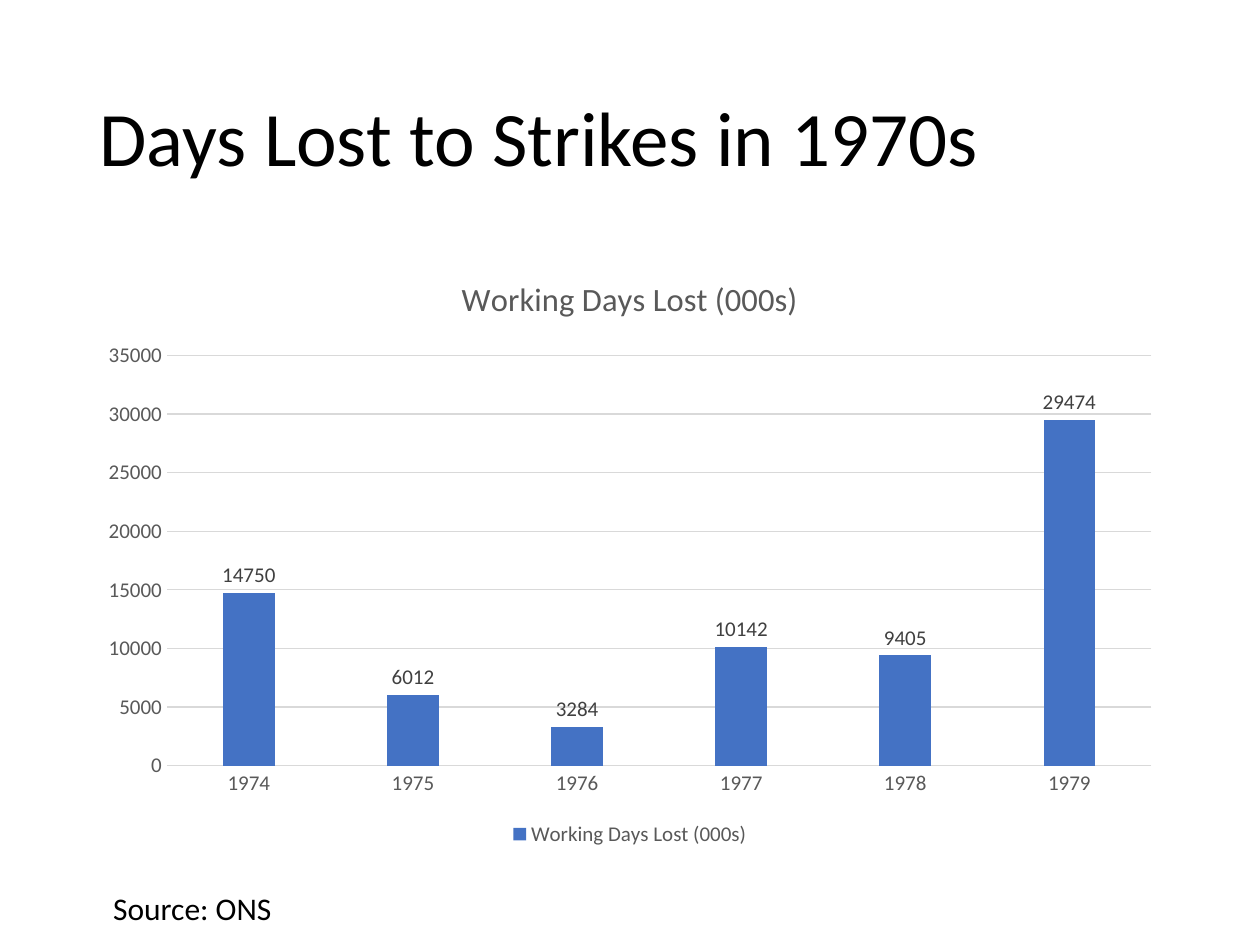
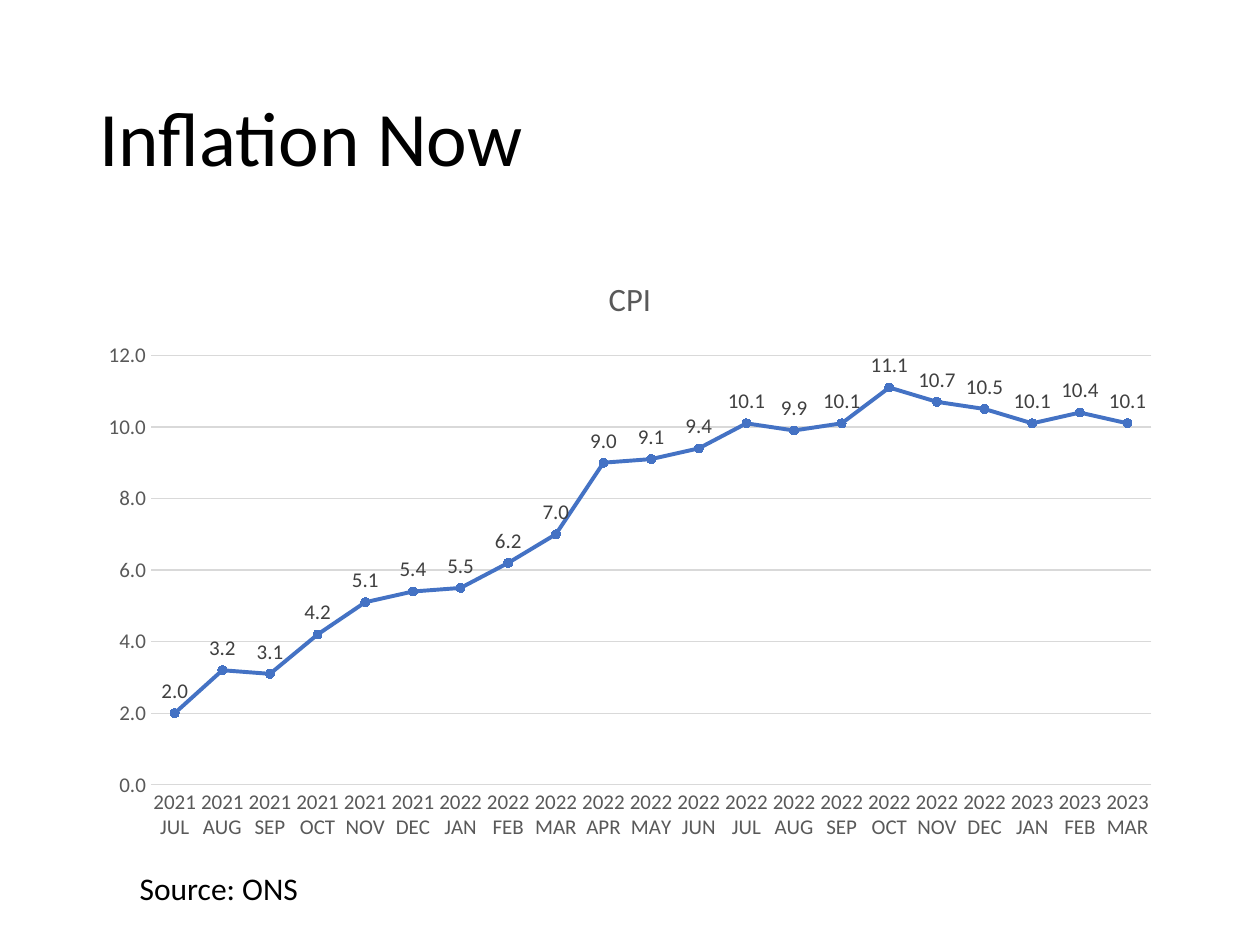
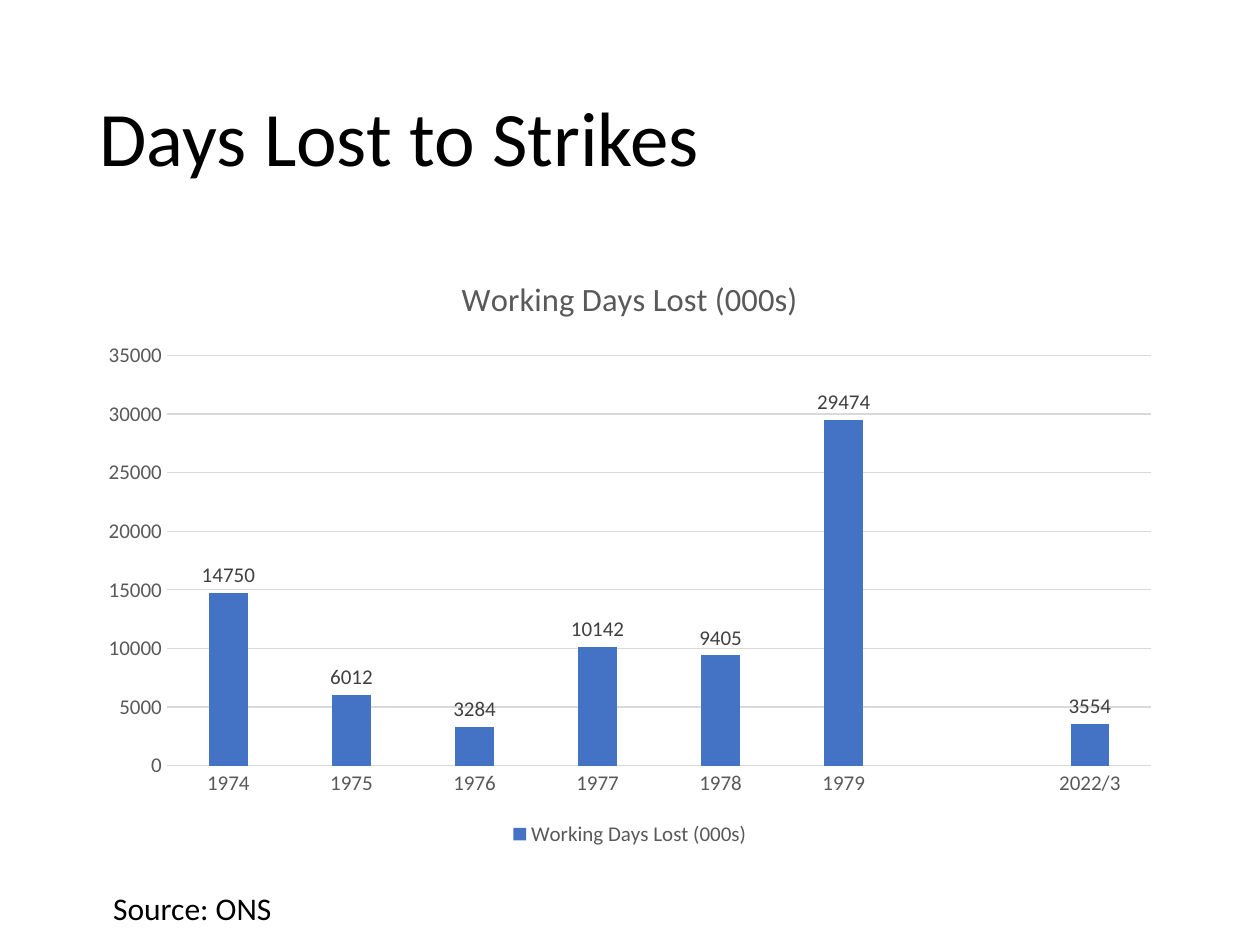
from pptx import Presentation
from pptx.chart.data import CategoryChartData
from pptx.dml.color import RGBColor
from pptx.enum.chart import (XL_CHART_TYPE, XL_LABEL_POSITION, XL_LEGEND_POSITION,
                             XL_MARKER_STYLE, XL_TICK_MARK)
from pptx.enum.text import MSO_ANCHOR, PP_ALIGN
from pptx.util import Inches, Pt

BARS, LINE = XL_CHART_TYPE.COLUMN_CLUSTERED, XL_CHART_TYPE.LINE_MARKERS
ABOVE, OUTSIDE = XL_LABEL_POSITION.ABOVE, XL_LABEL_POSITION.OUTSIDE_END
BOTTOM = XL_LEGEND_POSITION.BOTTOM
CIRCLE = XL_MARKER_STYLE.CIRCLE
NO_TICK = XL_TICK_MARK.NONE
LEFT, MIDDLE = PP_ALIGN.LEFT, MSO_ANCHOR.MIDDLE

FONT = "Calibri"
BLACK = RGBColor(0x00, 0x00, 0x00)
BLUE = RGBColor(0x44, 0x72, 0xC4)
GREY = RGBColor(0x59, 0x59, 0x59)
DARK = RGBColor(0x40, 0x40, 0x40)
PALE = RGBColor(0xD9, 0xD9, 0xD9)

# Content
SOURCE = "Source: ONS"
DAYS = "Working Days Lost (000s)"
STRIKES = [("1974", 14750), ("1975", 6012), ("1976", 3284),
           ("1977", 10142), ("1978", 9405), ("1979", 29474)]
MONTHS = "JAN FEB MAR APR MAY JUN JUL AUG SEP OCT NOV DEC".split()
CPI = [2, 3.2, 3.1, 4.2, 5.1, 5.4, 5.5, 6.2, 7, 9, 9.1, 9.4, 10.1, 9.9,
       10.1, 11.1, 10.7, 10.5, 10.1, 10.4, 10.1]
START = 6  # the CPI run begins in July 2021
PRICES = [(f"{2021 + n // 12} {MONTHS[n % 12]}", rate)
          for n, rate in enumerate(CPI, START)]

# Title, chart kind, series name, points, number format, place of the source note
SLIDES = [
    ("Days Lost to Strikes in 1970s", BARS, DAYS, STRIKES, "General", (0.8, 7.01, 7.9)),
    ("Inflation Now", LINE, "CPI", PRICES, "0.0", (1.01, 6.85, 8.15)),
    ("Days Lost to Strikes", BARS, DAYS, STRIKES + [("", None), ("2022/3", 3554)],
     "General", (0.8, 7.01, 7.9)),
]
SIDE, WIDTH = Inches(0.69), Inches(8.62)


def style(font, size, color):
    font.name, font.size, font.bold = FONT, Pt(size), False
    font.color.rgb = color


def rule(line, color, width=0.75):
    line.color.rgb = color
    line.width = Pt(width)


def add_title(slide, text):
    title = slide.shapes.title
    title.left, title.top = SIDE, Inches(0.4)
    title.width, title.height = WIDTH, Inches(1.45)
    frame = title.text_frame
    frame.text = text
    frame.vertical_anchor = MIDDLE
    para = frame.paragraphs[0]
    para.alignment, para.line_spacing = LEFT, 0.9
    style(para.font, 44, BLACK)


def add_note(slide, left, top, width):
    box = slide.shapes.add_textbox(Inches(left), Inches(top), Inches(width), Inches(0.4))
    box.text_frame.word_wrap = True
    para = box.text_frame.paragraphs[0]
    para.text = SOURCE
    style(para.font, 18, BLACK)


def add_plot(slide, kind, name, points, form):
    data = CategoryChartData(number_format=form)
    data.categories = [label for label, _ in points]
    data.add_series(name, [value for _, value in points])
    chart = slide.shapes.add_chart(kind, SIDE, Inches(2), WIDTH, Inches(4.76), data).chart
    style(chart.font, 10, BLACK)

    # Heading and legend
    chart.has_title = True
    head = chart.chart_title.text_frame
    head.text = name
    style(head.paragraphs[0].font, 18.6, GREY)
    chart.has_legend = kind == BARS
    if chart.has_legend:
        chart.legend.position = BOTTOM
        chart.legend.include_in_layout = False
        style(chart.legend.font, 12, GREY)

    # Axes
    for axis in (chart.category_axis, chart.value_axis):
        axis.major_tick_mark = axis.minor_tick_mark = NO_TICK
        style(axis.tick_labels.font, 12, GREY)
    rule(chart.category_axis.format.line, PALE)
    scale = chart.value_axis
    scale.format.line.fill.background()
    rule(scale.major_gridlines.format.line, PALE)
    scale.tick_labels.number_format = form
    scale.tick_labels.number_format_is_linked = False

    # Series and labels
    plot = chart.plots[0]
    plot.vary_by_categories = False
    series = plot.series[0]
    if kind == BARS:
        plot.gap_width, plot.overlap = 219, -27
        series.format.fill.solid()
        series.format.fill.fore_color.rgb = BLUE
    else:
        series.smooth = False
        rule(series.format.line, BLUE, 2.25)
        mark = series.marker
        mark.style, mark.size = CIRCLE, 5
        mark.format.fill.solid()
        mark.format.fill.fore_color.rgb = BLUE
        rule(mark.format.line, BLUE)
    labels = series.data_labels
    labels.show_value = True
    labels.position = OUTSIDE if kind == BARS else ABOVE
    labels.number_format, labels.number_format_is_linked = form, False
    style(labels.font, 12, DARK)


def main():
    deck = Presentation()
    deck.slide_width, deck.slide_height = Inches(10), Inches(7.5)
    layout = deck.slide_layouts.get_by_name("Title Only")
    for title, kind, name, points, form, place in SLIDES:
        slide = deck.slides.add_slide(layout)
        add_title(slide, title)
        add_plot(slide, kind, name, points, form)
        add_note(slide, *place)
    deck.save("out.pptx")


if __name__ == "__main__":
    main()
